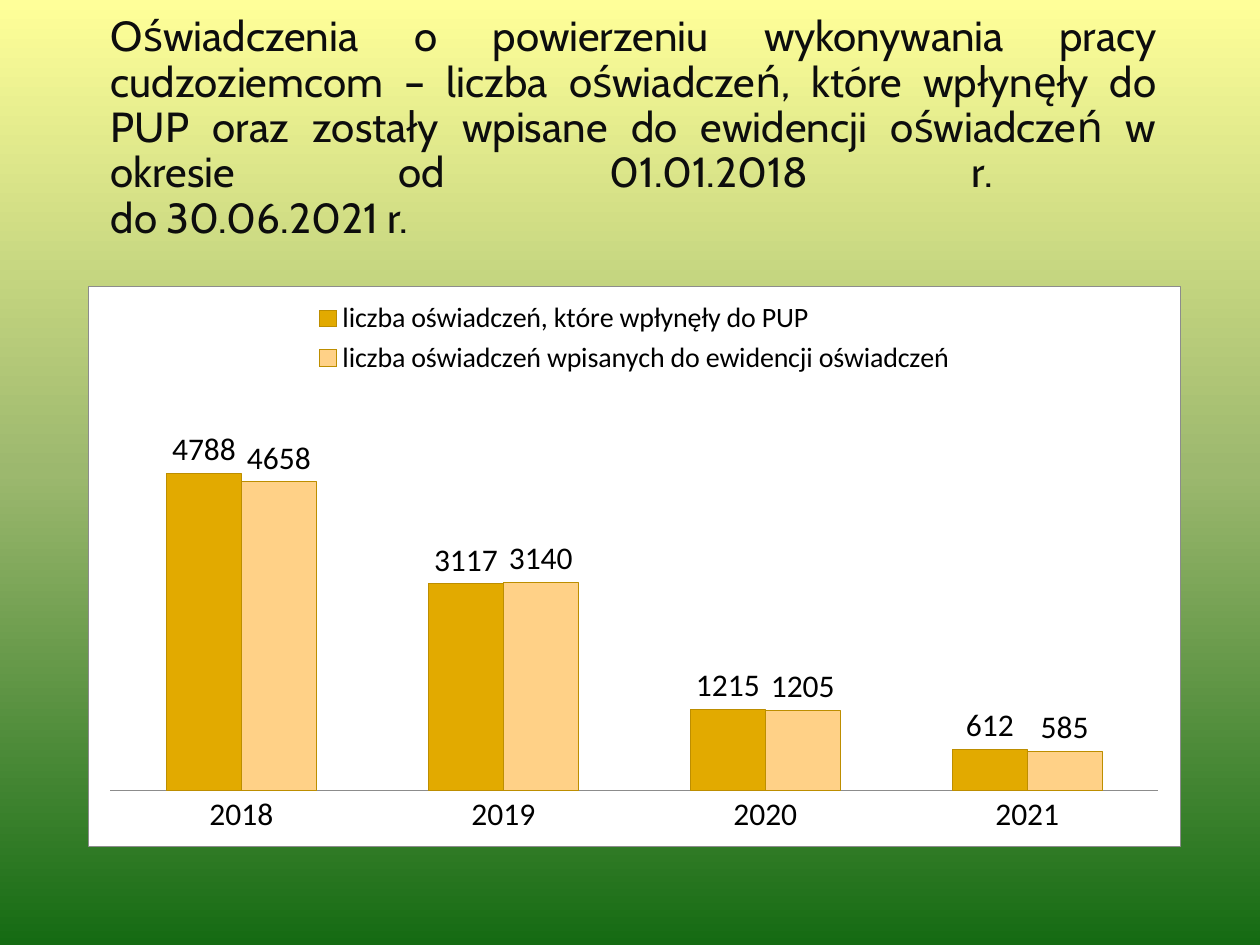
from pptx import Presentation
from pptx.chart.data import CategoryChartData as Data
from pptx.dml.color import RGBColor as RGB
from pptx.enum.chart import XL_CHART_TYPE as Kind, XL_LABEL_POSITION as Spot
from pptx.enum.chart import XL_LEGEND_POSITION as Side, XL_TICK_MARK as Tick
from pptx.enum.text import MSO_ANCHOR as Anchor, MSO_AUTO_SIZE as Fit, PP_ALIGN as Align
from pptx.oxml import parse_xml as to_xml
from pptx.oxml.ns import nsdecls, qn
from pptx.util import Inches, Pt
from copy import deepcopy

WIDE, HIGH = Inches(10), Inches(7.5)
TITLE = ("Oświadczenia o powierzeniu wykonywania pracy cudzoziemcom – liczba "
         "oświadczeń, które wpłynęły do PUP oraz zostały wpisane do ewidencji "
         "oświadczeń w okresie od 01.01.2018 r. \vdo 30.06.2021 r.")
YEARS = ["2018", "2019", "2020", "2021"]
SERIES = [
    ("liczba oświadczeń, które wpłynęły do PUP", [4788, 3117, 1215, 612], "E2AA00"),
    ("liczba oświadczeń wpisanych do ewidencji oświadczeń", [4658, 3140, 1205, 585], "FFD187"),
]


def paint(part, tint):
    part.rgb = RGB.from_string(tint)


def style(font, size, face="Calibri", tint="000000"):
    font.size, font.name = Pt(size), face
    paint(font.color, tint)


def edge(line, tint):
    line.width = Pt(0.5)
    paint(line.color, tint)


def place(box):
    left, top, wide, high = box
    return [int(WIDE * left), int(HIGH * top), int(WIDE * wide), int(HIGH * high)]


def add_back(slide):
    fill = slide.background.fill
    fill.gradient()
    fill.gradient_angle = 270
    stops = slide.element.find(".//" + qn("a:gsLst"))
    stops.insert(1, deepcopy(stops[0]))
    tints = ["FFFF99", "9CB86E", "156B13"]
    for i, (stop, tint) in enumerate(zip(fill.gradient_stops, tints)):
        stop.position = i / 2
        paint(stop.color, tint)


def add_title(slide, box):
    title = slide.shapes.title
    title.left, title.top, title.width, title.height = place(box)
    frame = title.text_frame
    frame.text = TITLE
    frame.word_wrap = True
    frame.auto_size = Fit.NONE
    frame.vertical_anchor = Anchor.BOTTOM
    para = frame.paragraphs[0]
    para.alignment = Align.JUSTIFY
    para.line_spacing = 0.9
    for run in para.runs:
        style(run.font, 24, "Cabin", "0D0D0D")


def set_panel(chart):
    space = chart.element
    space.find(qn("c:chart")).addnext(to_xml(
        f'<c:spPr {nsdecls("c", "a")}><a:solidFill><a:srgbClr val="FFFFFF"/></a:solidFill>'
        '<a:ln w="6350"><a:solidFill><a:srgbClr val="8C8C8C"/></a:solidFill></a:ln></c:spPr>'))
    plot = space.find(".//" + qn("c:plotArea"))
    for old in plot.findall(qn("c:layout")):
        plot.remove(old)
    rules = [("layoutTarget", "inner"), ("xMode", "edge"), ("yMode", "edge"),
             ("x", 0.02), ("y", 0.19), ("w", 0.96), ("h", 0.71)]
    marks = "".join(f'<c:{name} val="{val}"/>' for name, val in rules)
    plot.insert(0, to_xml(f'<c:layout {nsdecls("c")}><c:manualLayout>{marks}'
                          '</c:manualLayout></c:layout>'))


def add_bars(slide, box):
    data = Data()
    data.categories = YEARS
    for name, vals, tint in SERIES:
        data.add_series(name, vals)
    chart = slide.shapes.add_chart(Kind.COLUMN_CLUSTERED, *place(box), data).chart
    style(chart.font, 18)
    chart.has_title = False
    chart.has_legend = True
    chart.legend.position = Side.TOP
    chart.legend.include_in_layout = False
    style(chart.legend.font, 16)
    years, scale = chart.category_axis, chart.value_axis
    years.major_tick_mark = years.minor_tick_mark = Tick.NONE
    style(years.tick_labels.font, 18)
    edge(years.format.line, "8C8C8C")
    scale.visible = scale.has_major_gridlines = False
    scale.minimum_scale, scale.maximum_scale = 0, 6000
    plot = chart.plots[0]
    plot.gap_width, plot.overlap = 150, 0
    plot.vary_by_categories = False
    for bars, (name, vals, tint) in zip(plot.series, SERIES):
        bars.format.fill.solid()
        paint(bars.format.fill.fore_color, tint)
        edge(bars.format.line, "BD8E00")
        tags = bars.data_labels
        tags.show_value = True
        tags.position = Spot.OUTSIDE_END
        style(tags.font, 18)
    set_panel(chart)


def main():
    deck = Presentation()
    deck.slide_width, deck.slide_height = WIDE, HIGH
    slide = deck.slides.add_slide(deck.slide_layouts[5])
    add_back(slide)
    add_title(slide, (0.078, 0.115, 0.85, 0.148))
    add_bars(slide, (0.07, 0.303, 0.867, 0.593))
    deck.save("out.pptx")


if __name__ == "__main__":
    main()
